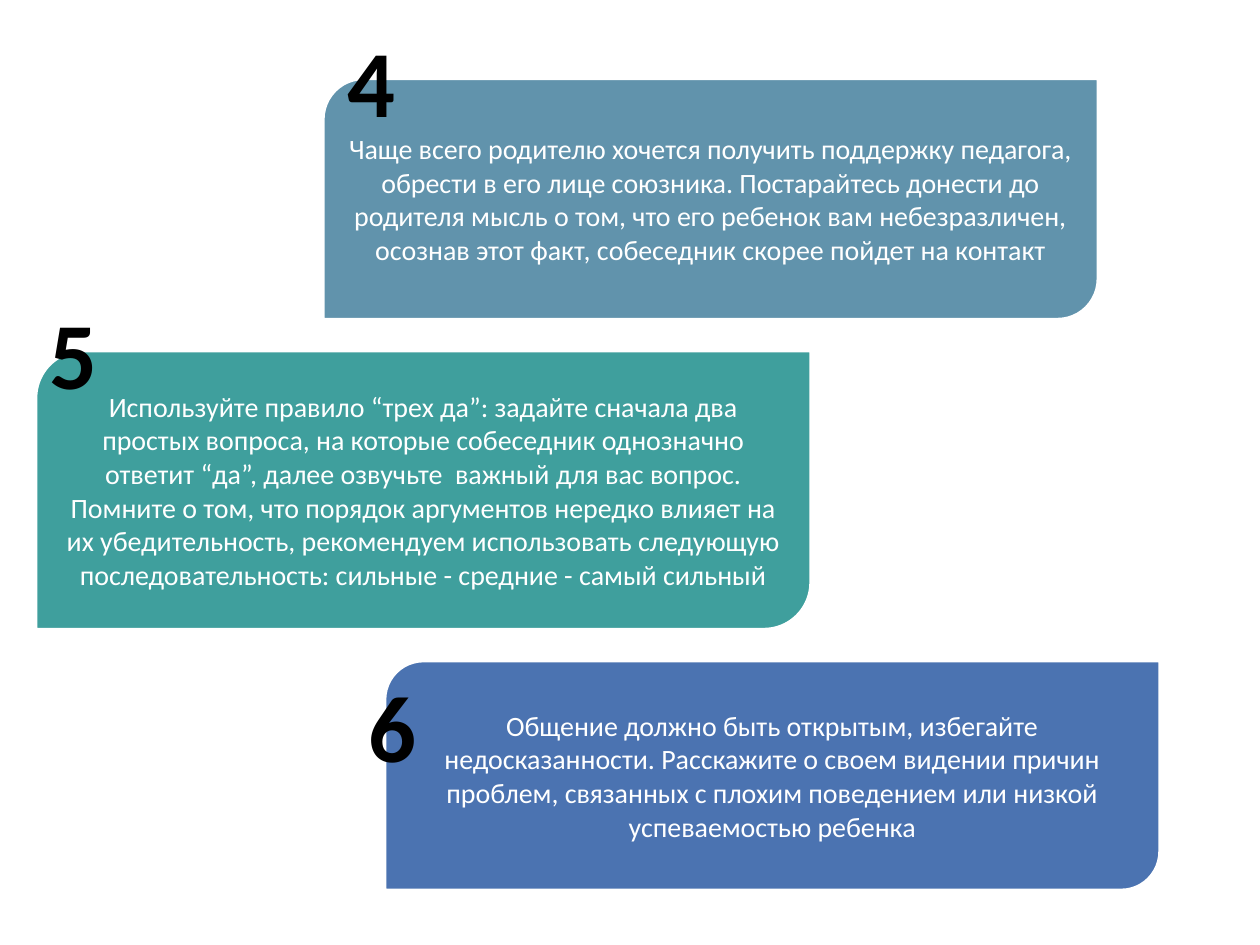
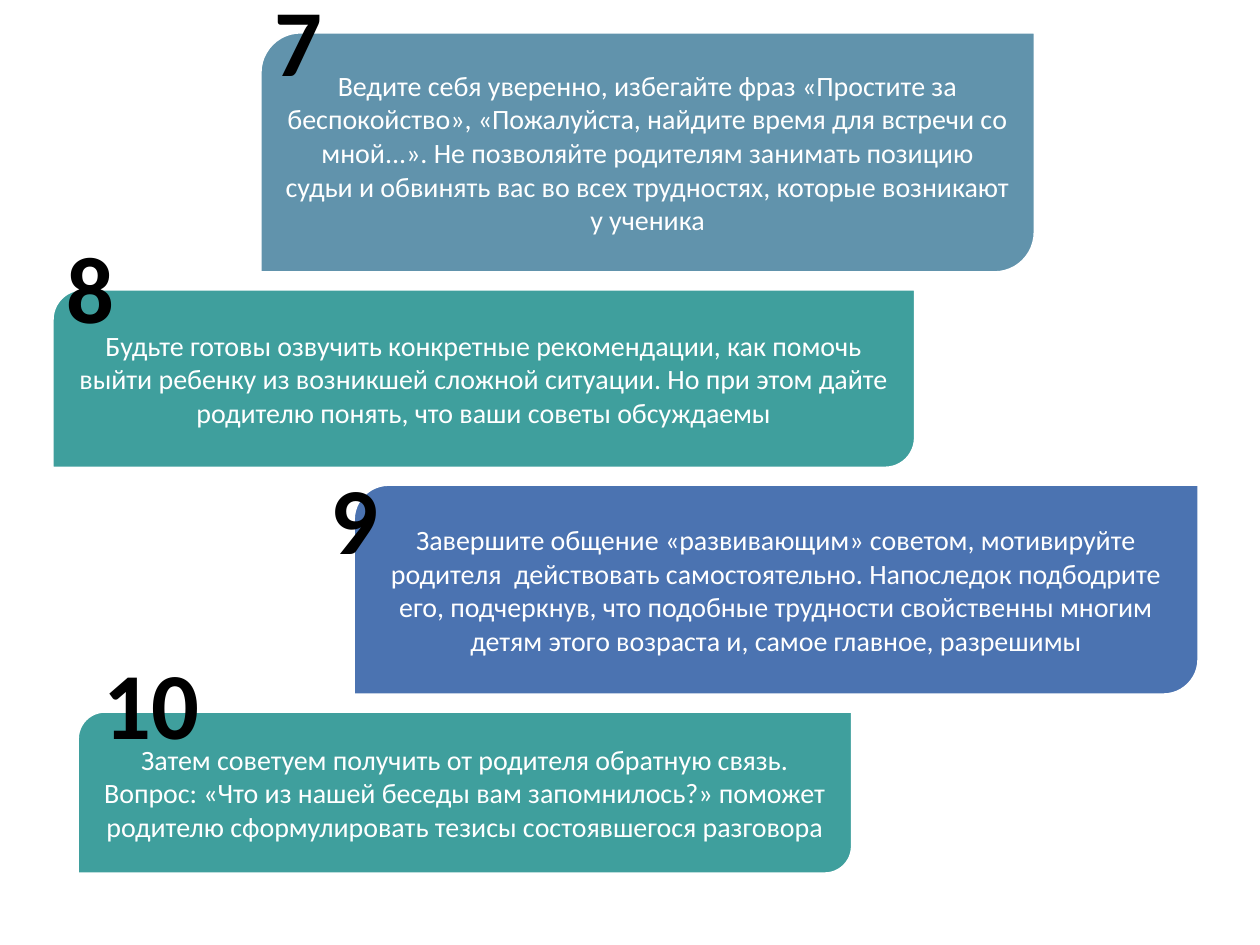
from lxml import etree
from pptx import Presentation
from pptx import util as u
from pptx.dml.color import RGBColor
from pptx.enum import shapes, text
from pptx.oxml import parse_xml

WHITE, BLACK = "FFFFFF", "000000"
STEEL, TEAL, BLUE = "6193AC", "3F9F9D", "4B73B1"
FONT = "Calibri"
CARD_WIDTH = 61.4
NUMBER_HEIGHT = 10.1
OUTLINE = (
    '<a:ln xmlns:a="http://schemas.openxmlformats.org/drawingml/2006/main" w="9525">'
    '<a:solidFill><a:srgbClr val="FFFFFF"/></a:solidFill></a:ln>'
)

presentation = Presentation()
presentation.slide_width, presentation.slide_height = u.Inches(10), u.Inches(7.5)
column = presentation.slide_width / 100
row = presentation.slide_height / 75


def color(value):
    return RGBColor.from_string(value)


def write(shape, words, frame_format, font_format, font_color):
    for name, value in frame_format.items():
        setattr(shape.text_frame, name, value)
    paragraph = shape.text_frame.paragraphs[0]
    paragraph.alignment = text.PP_ALIGN.CENTER
    run = paragraph.add_run()
    run.text = words
    for name, value in font_format.items():
        setattr(run.font, name, value)
    run.font.color.rgb = color(font_color)
    return run


card_frame = {"word_wrap": True, "vertical_anchor": text.MSO_ANCHOR.MIDDLE}
card_font = {"name": FONT, "size": u.Pt(16)}
number_frame = {"word_wrap": False, "auto_size": text.MSO_AUTO_SIZE.SHAPE_TO_FIT_TEXT}
number_font = {"name": FONT, "size": u.Pt(54), "bold": True}

# Each card: number, left, width, height, fill, number offset, advice
slides = [
    {
        "top": 6.3,
        "gap": 2.6,
        "cards": [
            ("4", 25.7, CARD_WIDTH, 19, STEEL, (0.8, -5),
             "Чаще всего родителю хочется получить поддержку педагога, обрести в его лице союзника. "
             "Постарайтесь донести до родителя мысль о том, что его ребенок вам небезразличен, "
             "осознав этот факт, собеседник скорее пойдет на контакт"),
            ("5", 2.9, CARD_WIDTH, 22, TEAL, (0, -5),
             "Используйте правило “трех да”: задайте сначала два простых вопроса, на которые "
             "собеседник однозначно ответит “да”, далее озвучьте  важный для вас вопрос. "
             "Помните о том, что порядок аргументов нередко влияет на их убедительность, "
             "рекомендуем использовать следующую последовательность: "
             "сильные - средние - самый сильный"),
            ("6", 30.6, CARD_WIDTH, 18.1, BLUE, (-2.4, 0),
             "Общение должно быть открытым, избегайте недосказанности. Расскажите о своем "
             "видении причин проблем, связанных с плохим поведением или низкой "
             "успеваемостью ребенка"),
        ],
    },
    {
        "top": 2.6,
        "gap": 1.4,
        "cards": [
            ("7", 20.7, CARD_WIDTH, 19, STEEL, (0, -4.5),
             "Ведите себя уверенно, избегайте фраз «Простите за беспокойство», «Пожалуйста, "
             "найдите время для встречи со мной...». Не позволяйте родителям занимать позицию "
             "судьи и обвинять вас во всех трудностях, которые возникают у ученика"),
            ("8", 4.2, 68.4, 14.1, TEAL, (0, -5.3),
             "Будьте готовы озвучить конкретные рекомендации, как помочь выйти ребенку из "
             "возникшей сложной ситуации. Но при этом дайте родителю понять, что ваши советы "
             "обсуждаемы"),
            ("9", 28.1, 67, 16.6, BLUE, (-2.9, -2.5),
             "Завершите общение «развивающим» советом, мотивируйте родителя  действовать "
             "самостоятельно. Напоследок подбодрите его, подчеркнув, что подобные трудности "
             "свойственны многим детям этого возраста и, самое главное, разрешимы"),
            ("10", 6.2, CARD_WIDTH, 12.8, TEAL, (1, -5.8),
             "Затем советуем получить от родителя обратную связь. Вопрос: «Что из нашей беседы "
             "вам запомнилось?» поможет родителю сформулировать тезисы состоявшегося разговора"),
        ],
    },
]

for layout in slides:
    slide = presentation.slides.add_slide(presentation.slide_layouts[6])
    top = layout["top"]
    numbers = []
    for number, left, width, height, fill, (shift_x, shift_y), advice in layout["cards"]:
        card = slide.shapes.add_shape(
            shapes.MSO_SHAPE.ROUND_2_DIAG_RECTANGLE,
            int(left * column), int(top * row), int(width * column), int(height * row))
        card.shadow.inherit = False
        card.fill.solid()
        card.fill.fore_color.rgb = color(fill)
        card.line.color.rgb = color(WHITE)
        card.line.width = u.Pt(1)
        write(card, advice, card_frame, card_font, WHITE)
        numbers.append((number, left + shift_x, top + shift_y))
        top += height + layout["gap"]

    for number, left, number_top in numbers:
        width = 2.1 + 3.8 * len(number)
        box = slide.shapes.add_textbox(
            int(left * column), int(number_top * row),
            int(width * column), int(NUMBER_HEIGHT * row))
        run = write(box, number, number_frame, number_font, BLACK)
        run.font._element.insert(0, parse_xml(OUTLINE)) if hasattr(run.font, "_element") else \
            run._r.get_or_add_rPr().insert(0, etree.fromstring(OUTLINE))

presentation.save("out.pptx")
